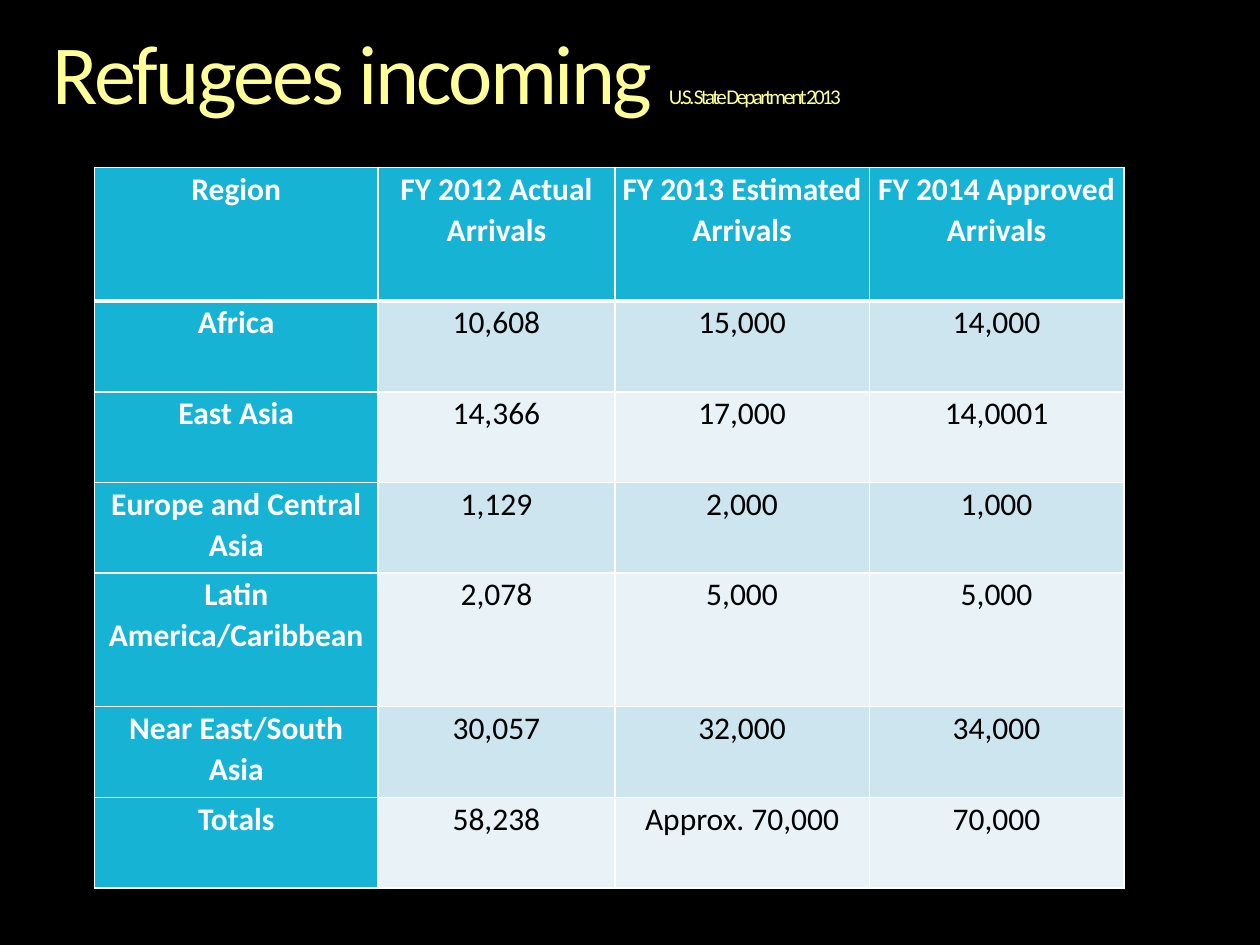
"""Builds a slide with a table of refugee arrivals by region and fiscal year."""
from lxml.etree import SubElement
from pptx import Presentation
from pptx.dml.color import RGBColor as RGB
from pptx.enum.text import PP_ALIGN as Align
from pptx.oxml.ns import qn
from pptx.util import Inches, Pt

TITLE = (("Refugees incoming ", 48), ("U.S. State Department 2013", 12))
ARRIVALS = (
    ("Region", "FY 2012 Actual Arrivals", "FY 2013 Estimated Arrivals", "FY 2014 Approved Arrivals"),
    ("Africa", "10,608", "15,000", "14,000"),
    ("East Asia", "14,366", "17,000", "14,0001"),
    ("Europe and Central Asia", "1,129", "2,000", "1,000"),
    ("Latin America/Caribbean", "2,078", "5,000", "5,000"),
    ("Near East/South Asia", "30,057", "32,000", "34,000"),
    ("Totals", "58,238", "Approx. 70,000", "70,000"),
)
COLORS = {"background": "000000", "title": "FFFF99", "heading": "16B3D5", "odd": "CCE5EF",
          "even": "E8F2F7", "rule": "FFFFFF", "heading_text": "FFFFFF", "figure": "000000"}
FONT = "Calibri"
COLUMN_WIDTHS = (2.25, 1.88, 2.02, 2.02)
SHORT_ROW, TALL_ROW = 0.72, 1.06
TALL_ROWS = (0, 4)
ROW_HEIGHTS = [TALL_ROW if row in TALL_ROWS else SHORT_ROW for row in range(len(ARRIVALS))]


def color(name):
    return RGB.from_string(COLORS[name])


def add_title(slide):
    frame = slide.shapes.add_textbox(Inches(0.42), Inches(0.25), Inches(9.17), Inches(0.73)).text_frame
    frame.word_wrap = True
    frame.margin_left = frame.margin_top = frame.margin_right = frame.margin_bottom = 0
    heading = frame.paragraphs[0]
    heading.line_spacing = 0.9
    heading.font.name = FONT
    heading.font.color.rgb = color("title")
    for text, size in TITLE:
        part = heading.add_run()
        part.text = text
        part.font.size = Pt(size)
        part.font._element.set("spc", "-150")


def add_borders(cell, widths):
    properties = cell._tc.get_or_add_tcPr()
    for side, width in widths.items():
        border = SubElement(properties, qn(f"a:ln{side}"), w=str(Pt(width)))
        SubElement(SubElement(border, qn("a:solidFill")), qn("a:srgbClr"), val=COLORS["rule"])


def fill_cell(cell, text, row, column):
    is_heading = row == 0 or column == 0
    add_borders(cell, {"L": 1, "R": 1, "T": 3 if row == 1 else 1, "B": 3 if row == 0 else 1})
    cell.fill.solid()
    cell.fill.fore_color.rgb = color("heading" if is_heading else "odd" if row % 2 else "even")
    cell.margin_left = cell.margin_right = Inches(0.06)
    cell.margin_top = cell.margin_bottom = 0
    cell.text = text
    entry = cell.text_frame.paragraphs[0]
    entry.alignment = Align.CENTER
    entry.line_spacing = 1.07
    entry.font.name = FONT
    entry.font.size = Pt(18)
    entry.font.bold = is_heading
    entry.font.color.rgb = color("heading_text" if is_heading else "figure")


def add_arrivals(slide):
    table = slide.shapes.add_table(
        len(ARRIVALS), len(COLUMN_WIDTHS), Inches(0.75), Inches(1.33),
        Inches(sum(COLUMN_WIDTHS)), Inches(sum(ROW_HEIGHTS))).table
    table.first_col = True
    for column, width in zip(table.columns, COLUMN_WIDTHS):
        column.width = Inches(width)
    for row, (height, texts) in enumerate(zip(ROW_HEIGHTS, ARRIVALS)):
        table.rows[row].height = Inches(height)
        for column, text in enumerate(texts):
            fill_cell(table.cell(row, column), text, row, column)


def main():
    deck = Presentation()
    deck.slide_width, deck.slide_height = Inches(10), Inches(7.5)
    slide = deck.slides.add_slide(deck.slide_layouts[6])
    slide.background.fill.solid()
    slide.background.fill.fore_color.rgb = color("background")
    add_title(slide)
    add_arrivals(slide)
    deck.save("out.pptx")


if __name__ == "__main__":
    main()
